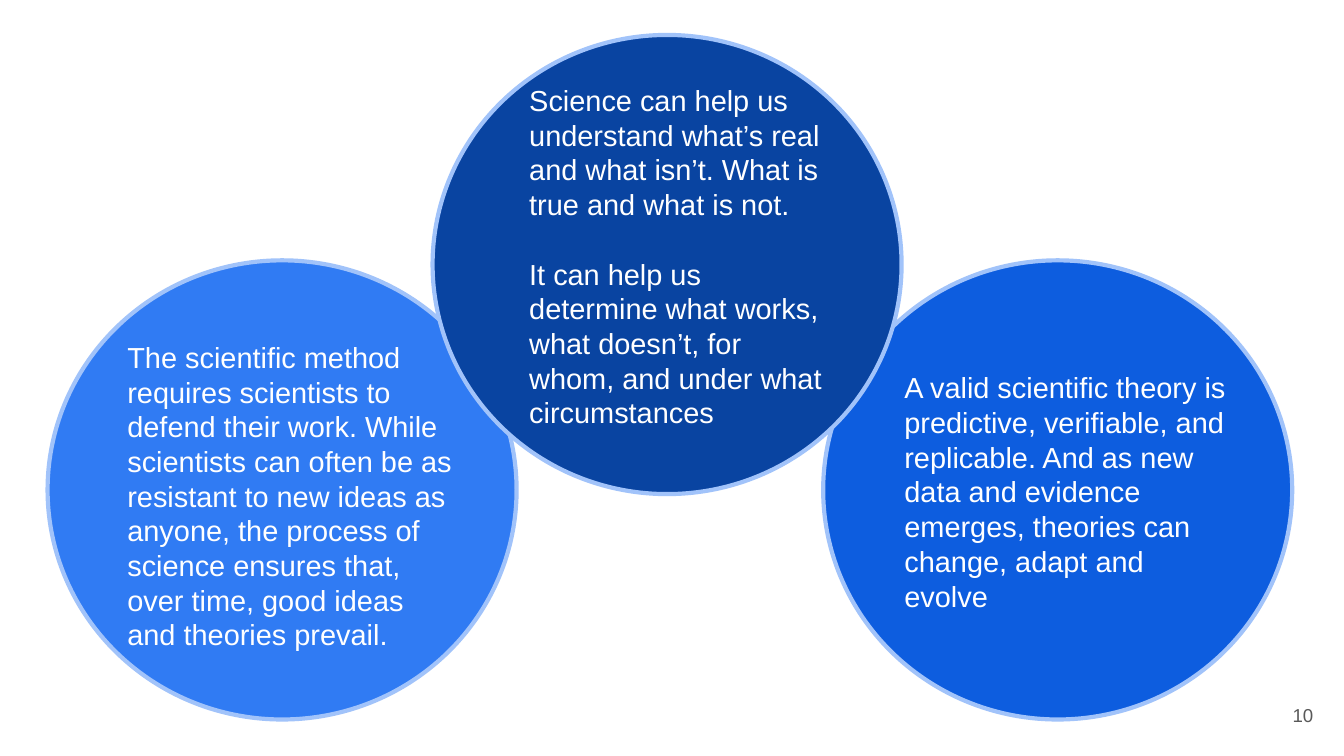
from pptx import Presentation
from pptx.dml.color import RGBColor
from pptx.enum.shapes import MSO_SHAPE
from pptx.enum.text import MSO_ANCHOR, PP_ALIGN
from pptx.util import Pt

ELLIPSE = MSO_SHAPE.OVAL
MIDDLE = MSO_ANCHOR.MIDDLE
LEFT, RIGHT = PP_ALIGN.LEFT, PP_ALIGN.RIGHT

PX = 9525  # 96 px to the inch
SLIDE_WIDTH, SLIDE_HEIGHT = 960, 540
INSET = 10
CIRCLE_WIDTH, CIRCLE_HEIGHT = 335, 328
FONT = "Arial"
PARAGRAPH_GAP = 18.6

# circle position, fill, text box relative to the circle, bottom inset, paragraphs
CIRCLES = [
    ((588, 186), "0D5DDF", (48, 119, 253, 92), INSET, [
        "A valid scientific theory is predictive, verifiable, and replicable. "
        "And as new data and evidence emerges, theories can change, adapt and evolve",
    ]),
    ((34, 186), "307BF3", (47, 138, 253, 82), 32, [
        "The scientific method requires scientists to defend their work. "
        "While scientists can often be as resistant to new ideas as anyone, "
        "the process of science ensures that, over time, good ideas and theories prevail.",
    ]),
    ((309, 25), "0944A1", (59, 112, 233, 92), INSET, [
        "Science can help us understand what’s real and what isn’t. "
        "What is true and what is not.",
        "It can help us determine what works, what doesn’t, for whom, "
        "and under what circumstances",
    ]),
]


def color(hex_string):
    return RGBColor.from_string(hex_string)


def scaled(*lengths):
    return [length * PX for length in lengths]


def add_text(shapes, box, paragraphs, size, text_color, alignment=LEFT,
             bottom_inset=INSET):
    frame = shapes.add_textbox(*scaled(*box)).text_frame
    frame.word_wrap = True
    frame.vertical_anchor = MIDDLE
    frame.margin_left = frame.margin_right = frame.margin_top = INSET * PX
    frame.margin_bottom = bottom_inset * PX
    for index, text in enumerate(paragraphs):
        paragraph = frame.add_paragraph() if index else frame.paragraphs[0]
        paragraph.alignment = alignment
        if index:
            paragraph.space_before = Pt(PARAGRAPH_GAP)
        run = paragraph.add_run()
        run.text = text
        run.font.name = FONT
        run.font.size = Pt(size)
        run.font.color.rgb = color(text_color)


def add_circle(slide, position, fill, text_box, bottom_inset, paragraphs):
    left, top = position
    group = slide.shapes.add_group_shape()
    circle = group.shapes.add_shape(
        ELLIPSE, *scaled(left, top, CIRCLE_WIDTH, CIRCLE_HEIGHT))
    circle.shadow.inherit = False
    circle.fill.solid()
    circle.fill.fore_color.rgb = color(fill)
    circle.line.color.rgb = color("A1C3FA")
    circle.line.width = Pt(2.25)
    text_left, text_top, width, height = text_box
    add_text(group.shapes, (left + text_left, top + text_top, width, height),
             paragraphs, 15.5, "FFFFFF", bottom_inset=bottom_inset)


def add_page_number(slide, box, number):
    add_text(slide.shapes, box, [number], 10, "595959", RIGHT)


def main():
    presentation = Presentation()
    presentation.slide_width, presentation.slide_height = scaled(
        SLIDE_WIDTH, SLIDE_HEIGHT)
    slide = presentation.slides.add_slide(presentation.slide_layouts[6])
    for circle in CIRCLES:
        add_circle(slide, *circle)
    add_page_number(slide, (890, 490, 58, 41), "10")
    presentation.save("out.pptx")


if __name__ == "__main__":
    main()
